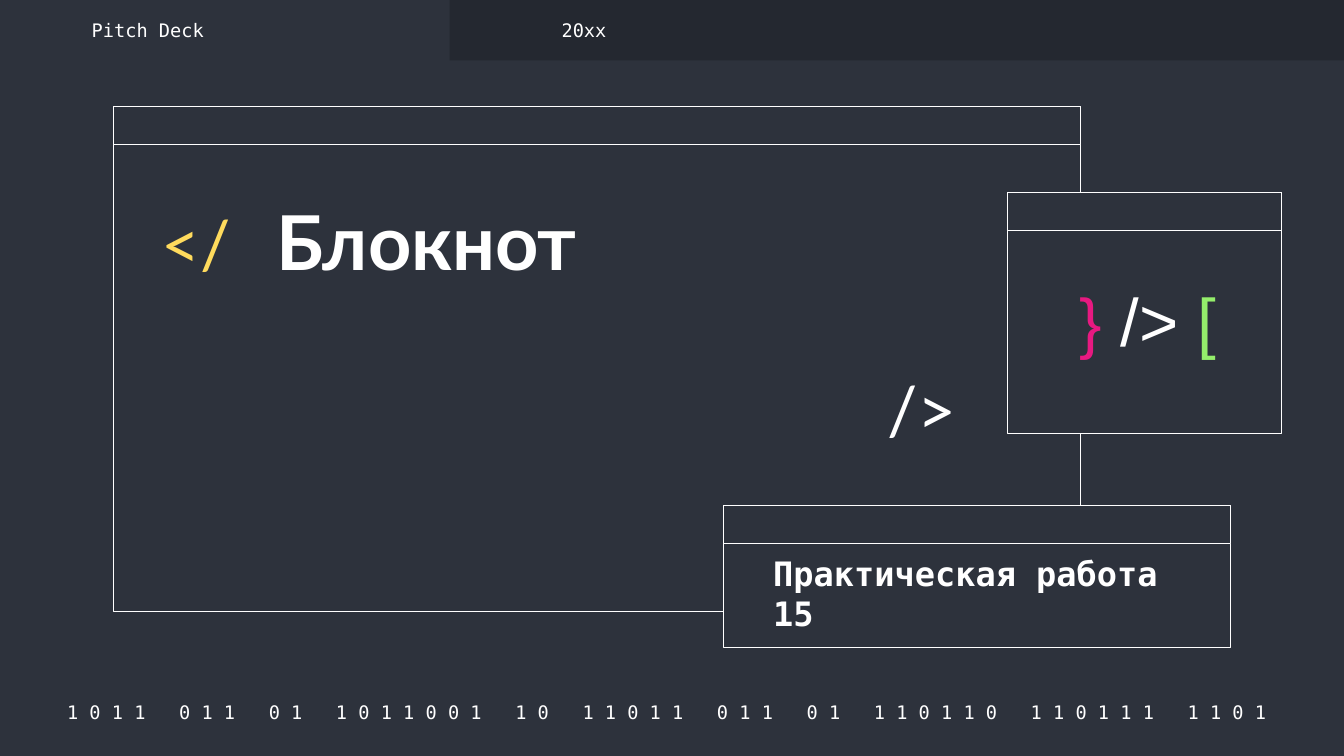
"""Build the dark code-window title slide."""
import pptx
import pptx.dml.color
import pptx.enum.shapes
import pptx.enum.text
import pptx.util

RGB = pptx.dml.color.RGBColor
BASE = RGB(0x2D, 0x32, 0x3C)
DARK = RGB(0x24, 0x28, 0x30)
WHITE = RGB(0xFF, 0xFF, 0xFF)
GOLD = RGB(0xFF, 0xDB, 0x5D)
PINK = RGB(0xE8, 0x19, 0x81)
GREEN = RGB(0x94, 0xEE, 0x6B)

MONO = "DejaVu Sans Mono"
LEFT = pptx.enum.text.PP_ALIGN.LEFT
CENTER = pptx.enum.text.PP_ALIGN.CENTER
TOP = pptx.enum.text.MSO_ANCHOR.TOP
MIDDLE = pptx.enum.text.MSO_ANCHOR.MIDDLE

deck = pptx.Presentation()
deck.slide_width = pptx.util.Inches(13.33)
deck.slide_height = pptx.util.Inches(7.5)
col = deck.slide_width / 100
row = deck.slide_height / 100

slide = deck.slides.add_slide(deck.slide_layouts[6])
slide.background.fill.solid()
slide.background.fill.fore_color.rgb = BASE


def add_box(x, y, w, h, fill, line=None):
    box = slide.shapes.add_shape(
        pptx.enum.shapes.MSO_SHAPE.RECTANGLE,
        int(x * col), int(y * row), int(w * col), int(h * row))
    box.shadow.inherit = False
    box.fill.solid()
    box.fill.fore_color.rgb = fill
    if line is None:
        box.line.fill.background()
    else:
        box.line.color.rgb = line
        box.line.width = pptx.util.Pt(0.75)


def add_text(x, y, w, h, runs, font, size, bold=False,
             align=LEFT, anchor=MIDDLE, space=1.0):
    box = slide.shapes.add_textbox(
        int(x * col), int(y * row), int(w * col), int(h * row))
    frame = box.text_frame
    frame.word_wrap = True
    frame.vertical_anchor = anchor
    pad = pptx.util.Inches(0.13)
    frame.margin_left = frame.margin_right = pad
    frame.margin_top = frame.margin_bottom = pad
    para = frame.paragraphs[0]
    para.alignment = align
    para.line_spacing = space
    for words, color in runs:
        run = para.add_run()
        run.text = words
        run.font.name = font
        run.font.size = pptx.util.Pt(size)
        run.font.bold = bold
        run.font.color.rgb = color


codes = "1011 011 01 1011001 10 11011 011 01 110110 110111 1101"
digits = " ".join(codes.replace(" ", "  ").replace("  ", " ")) + " "
add_text(3.75, 92.4, 92.72, 3.47, [(digits, WHITE)], MONO, 13.3, align=CENTER)

tab = 33.46
add_box(tab, 0, 100 - tab, 8, DARK)

windows = [
    (8.48, 14.13, 71.94, 66.8),
    (53.86, 66.93, 37.73, 18.67),
    (74.94, 25.47, 20.41, 31.87),
]
for x, y, w, h in windows:
    for height in (h, 4.97):
        add_box(x, y, w, height, BASE, WHITE)

for x, y, mark, color in [(11.03, 26.93, "</", GOLD), (65.04, 48.8, "/>", WHITE)]:
    add_text(x, y, 7.65, 11.73, [(mark, color)], "Lato", 48, space=0.9)

add_text(78.77, 36.4, 13.28, 14.53,
         [("}", PINK), (" /> ", WHITE), ("[", GREEN)],
         "Arial", 48, align=CENTER, anchor=TOP, space=0.9)
add_text(19.58, 25.47, 45.39, 32.67, [("Блокнот", WHITE)],
         "Lato", 54, bold=True, anchor=TOP, space=0.9)
add_text(56.56, 73.33, 33.31, 10.27, [("Практическая работа 15", WHITE)],
         MONO, 24, bold=True)

for x, label in [(5.85, "Pitch Deck"), (40.81, "20xx")]:
    add_text(x, 2.27, 21.91, 3.47, [(label, WHITE)], MONO, 13.3)

deck.save("out.pptx")
